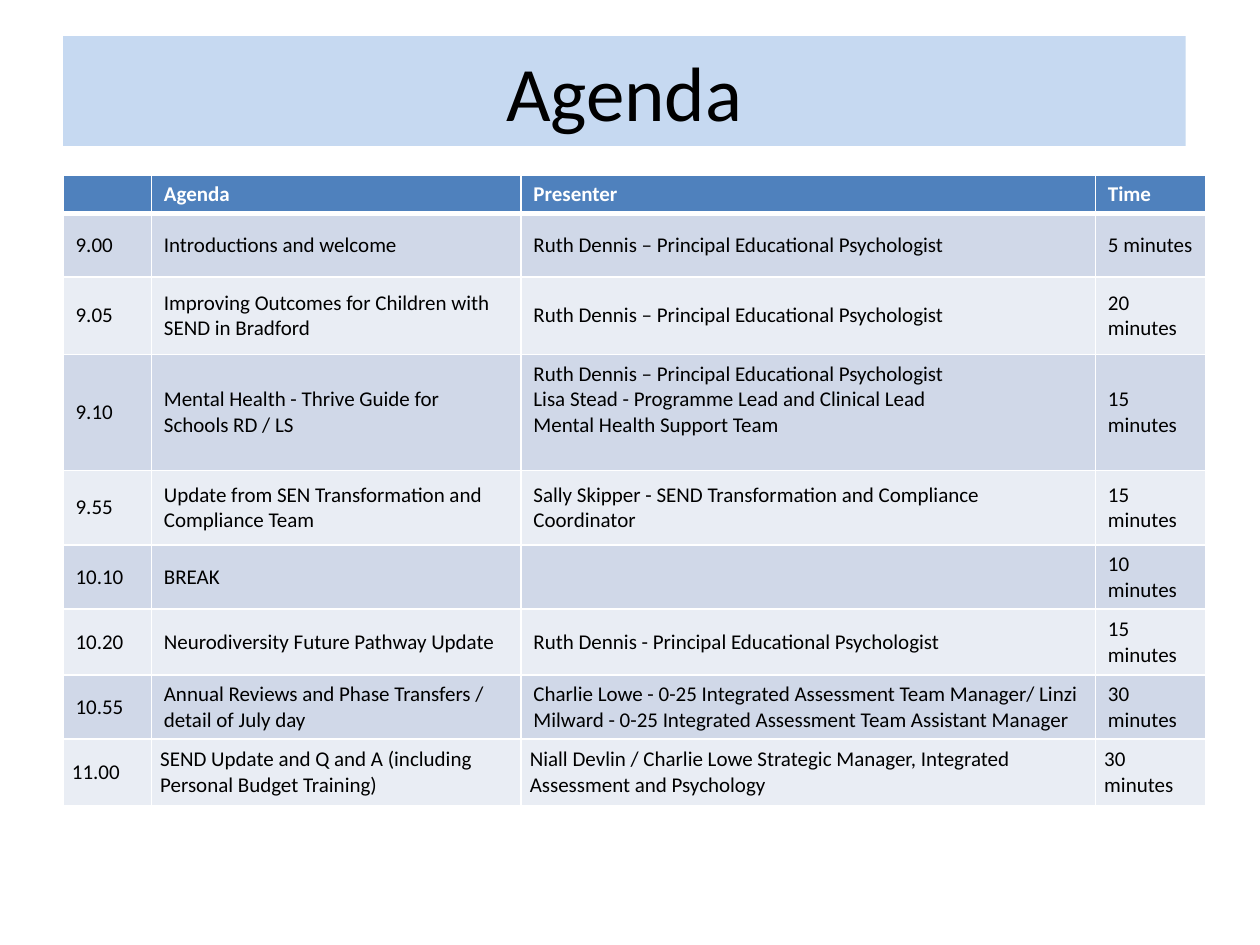
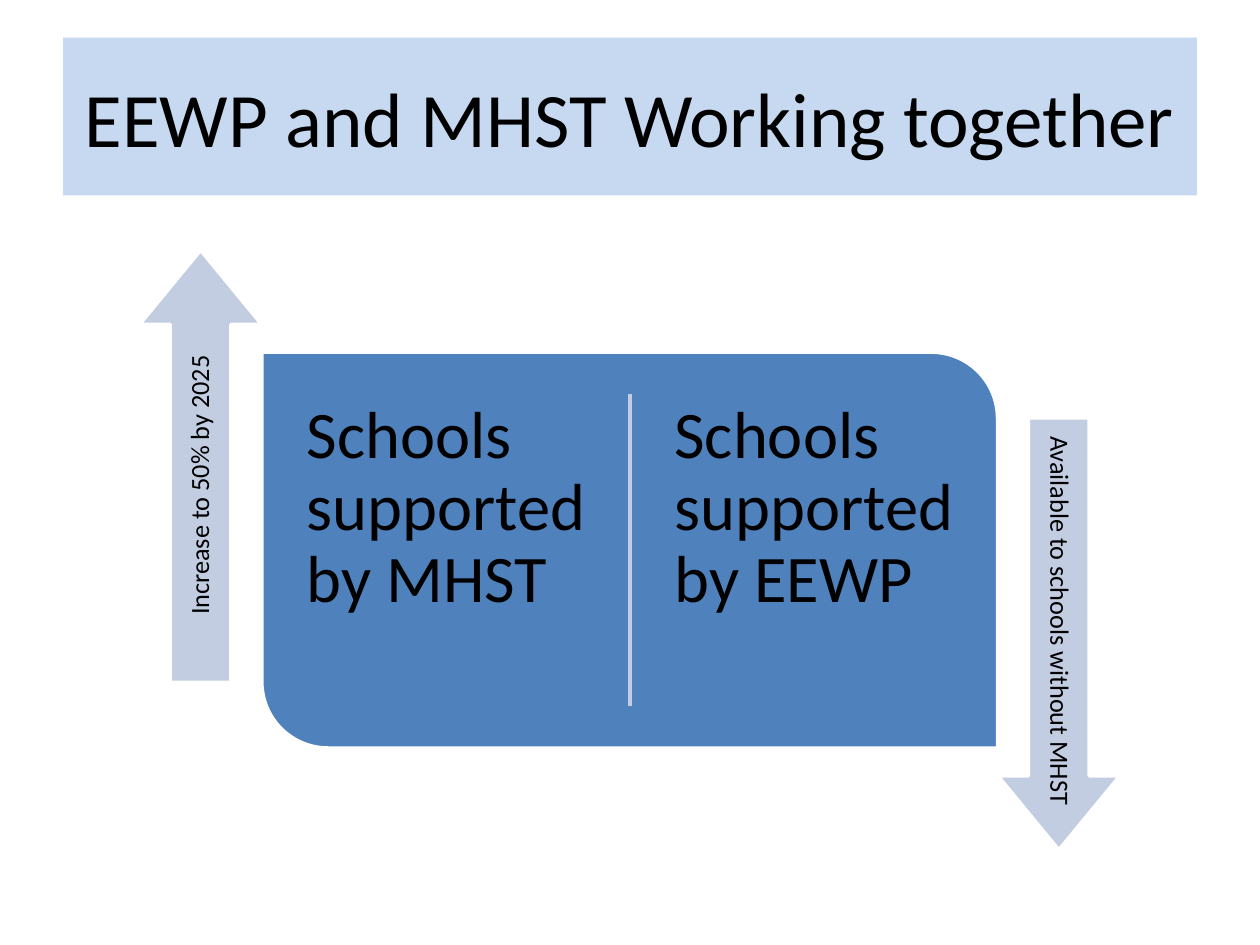
from lxml import etree
from pptx import Presentation
from pptx.dml.color import RGBColor
from pptx.enum import shapes, text
from pptx.oxml import ns
from pptx.util import Cm, Pt

HUES = {"band": "C6D9F1", "main": "4F81BD", "odd": "D0D8E8", "even": "E9EDF4",
        "arrow": "C2CDE1", "ink": "000000", "white": "FFFFFF"}
FONT = "Calibri"
COLS = [1.78, 7.45, 11.58, 2.22]
ROWS = [0.77, 1.28, 1.57, 2.33, 1.51, 1.29, 1.33, 1.29, 1.34]
HEAD = "Ruth Dennis – Principal Educational Psychologist"
AGENDA = [
    ("", "Agenda", "Presenter", "Time"),
    ("9.00", "Introductions and welcome", HEAD, "5 minutes"),
    ("9.05", "Improving Outcomes for Children with SEND in Bradford", HEAD, "20 minutes"),
    ("9.10", "Mental Health - Thrive Guide for Schools RD / LS",
     HEAD + "\nLisa Stead - Programme Lead and Clinical Lead\nMental Health Support Team",
     "15 minutes"),
    ("9.55", "Update from SEN Transformation and Compliance Team",
     "Sally Skipper - SEND Transformation and Compliance Coordinator", "15 minutes"),
    ("10.10", "BREAK", "", "10 minutes"),
    ("10.20", "Neurodiversity Future Pathway Update",
     "Ruth Dennis - Principal Educational Psychologist", "15 minutes"),
    ("10.55", "Annual Reviews and Phase Transfers / detail of July day",
     "Charlie Lowe - 0-25 Integrated Assessment Team Manager/ "
     "Linzi Milward - 0-25 Integrated Assessment Team Assistant Manager", "30 minutes"),
    ("11.00", "SEND Update and Q and A (including Personal Budget Training)",
     "Niall Devlin / Charlie Lowe Strategic Manager, Integrated Assessment and Psychology",
     "30 minutes"),
]


def rgb(hue):
    """Return the named colour."""
    return RGBColor.from_string(HUES[hue])


def paint(item, hue):
    """Fill a shape or cell with one colour."""
    item.fill.solid()
    item.fill.fore_color.rgb = rgb(hue)


def write(frame, words, size, hue="ink", bold=False, align=text.PP_ALIGN.LEFT, pitch=None):
    """Set the words and style of a text frame."""
    frame.text = words
    frame.word_wrap = True
    for para in frame.paragraphs:
        para.alignment = align
        para.line_spacing = pitch
        font = para.font
        font.name, font.size, font.bold = FONT, Pt(size), bold
        font.color.rgb = rgb(hue)


def start(deck, words, box):
    """Add a slide with its title band."""
    slide = deck.slides.add_slide(deck.slide_layouts[5])
    title = slide.shapes.title
    title.left, title.top, title.width, title.height = map(Cm, box)
    paint(title, "band")
    write(title.text_frame, words, 44, align=text.PP_ALIGN.CENTER)
    title.text_frame.auto_size = text.MSO_AUTO_SIZE.NONE
    title.text_frame.vertical_anchor = text.MSO_ANCHOR.MIDDLE
    return slide


def edge(cell, row):
    """Draw white cell borders, thick below the header."""
    thick = {(0, "B"), (1, "T")}
    props = cell._tc.get_or_add_tcPr()
    for side in "LRTB":
        width = Pt(3 if (row, side) in thick else 1)
        line = etree.SubElement(props, ns.qn("a:ln" + side), w=str(width))
        fill = etree.SubElement(line, ns.qn("a:solidFill"))
        etree.SubElement(fill, ns.qn("a:srgbClr"), val=HUES["white"])


def plan(slide, left, top):
    """Build the agenda table from its top left corner."""
    table = slide.shapes.add_table(len(ROWS), len(COLS), Cm(left), Cm(top),
                                   Cm(sum(COLS)), Cm(sum(ROWS))).table
    table.horz_banding = False
    for col, width in zip(table.columns, COLS):
        col.width = Cm(width)
    for row, (line, high) in enumerate(zip(AGENDA, ROWS)):
        table.rows[row].height = Cm(high)
        top_row = row == 0
        for col, words in enumerate(line):
            cell = table.cell(row, col)
            edge(cell, row)
            paint(cell, "main" if top_row else "odd" if row % 2 else "even")
            write(cell.text_frame, words, 12, "white" if top_row else "ink", top_row)
            cell.vertical_anchor = text.MSO_ANCHOR.MIDDLE
            if "\n" in words:
                cell.margin_bottom = Cm(0.64)
            if row == len(ROWS) - 1:
                cell.margin_left = cell.margin_right = Cm(0.18)
                cell.margin_top = cell.margin_bottom = 0


def shape(slide, kind, box, hue, sizes):
    """Add a filled shape with a white outline."""
    item = slide.shapes.add_shape(kind, *map(Cm, box))
    for spot, size in enumerate(sizes):
        item.adjustments[spot] = size
    item.shadow.inherit = False
    paint(item, hue)
    item.line.color.rgb, item.line.width = rgb("white"), Pt(2)
    return item


def label(slide, words, box, size, pad, align=text.PP_ALIGN.LEFT):
    """Add a text box with equal padding."""
    item = slide.shapes.add_textbox(*map(Cm, box))
    frame = item.text_frame
    frame.margin_left = frame.margin_right = frame.margin_top = frame.margin_bottom = Cm(pad)
    write(frame, words, size, align=align, pitch=0.9)
    return item


def panel(slide, box, names):
    """Build the block with a divider and two texts."""
    left, top, wide, high = box
    shape(slide, shapes.MSO_SHAPE.ROUND_2_DIAG_RECTANGLE, box, "main", (0, 0.167))
    half, gap, inset = wide / 2, 0.49, 0.84
    mid = Cm(left + half)
    line = slide.shapes.add_connector(shapes.MSO_CONNECTOR.STRAIGHT, mid, Cm(top + inset),
                                      mid, Cm(top + high - inset))
    line.line.color.rgb, line.line.width = rgb("arrow"), Pt(2)
    etree.SubElement(line._element.spPr, ns.qn("a:effectLst"))
    for spot, name in enumerate(names):
        area = (left + spot * half + gap, top + 0.58, half - 2 * gap, high - 1.2)
        note = label(slide, "Schools supported by " + name, area, 38, 0.41)
        note.text_frame.margin_right = Cm(0.1)


def arrow(slide, words, mid, turn, align):
    """Build a turned arrow and its label around a centre."""
    across, down = mid
    long, broad, run, deep = 8.71, 2.46, 7.95, 1.24
    body = shape(slide, shapes.MSO_SHAPE.RIGHT_ARROW,
                 (across - long / 2, down - broad / 2, long, broad), "arrow", (0.498, 0.607))
    shift = (long - run) / 2 * (1 if turn == 270 else -1)
    note = label(slide, words, (across - run / 2, down + shift - deep / 2, run, deep),
                 15, 0.15, align)
    note.text_frame.vertical_anchor = text.MSO_ANCHOR.MIDDLE
    body.rotation = note.rotation = turn


def main():
    """Build and save both slides."""
    deck = Presentation()
    deck.slide_width, deck.slide_height = Cm(25.4), Cm(19.05)
    plan(start(deck, "Agenda", (1.27, 0.73, 22.63, 2.21)), 1.27, 3.53)

    slide = start(deck, "EEWP and MHST Working together", (1.27, 0.76, 22.86, 3.18))
    left, top, wide, high = box = (5.28, 7.1, 14.83, 7.98)
    panel(slide, box, ("MHST", "EEWP"))
    across, down = left + wide / 2, top + high / 2
    for words, turn, sign, align in (
            ("Increase to 50% by 2025", 270, -1, text.PP_ALIGN.CENTER),
            ("Available to schools without MHST", 90, 1, text.PP_ALIGN.RIGHT)):
        arrow(slide, words, (across + sign * 8.65, down + sign * 1.69), turn, align)
    deck.save("out.pptx")


if __name__ == "__main__":
    main()
